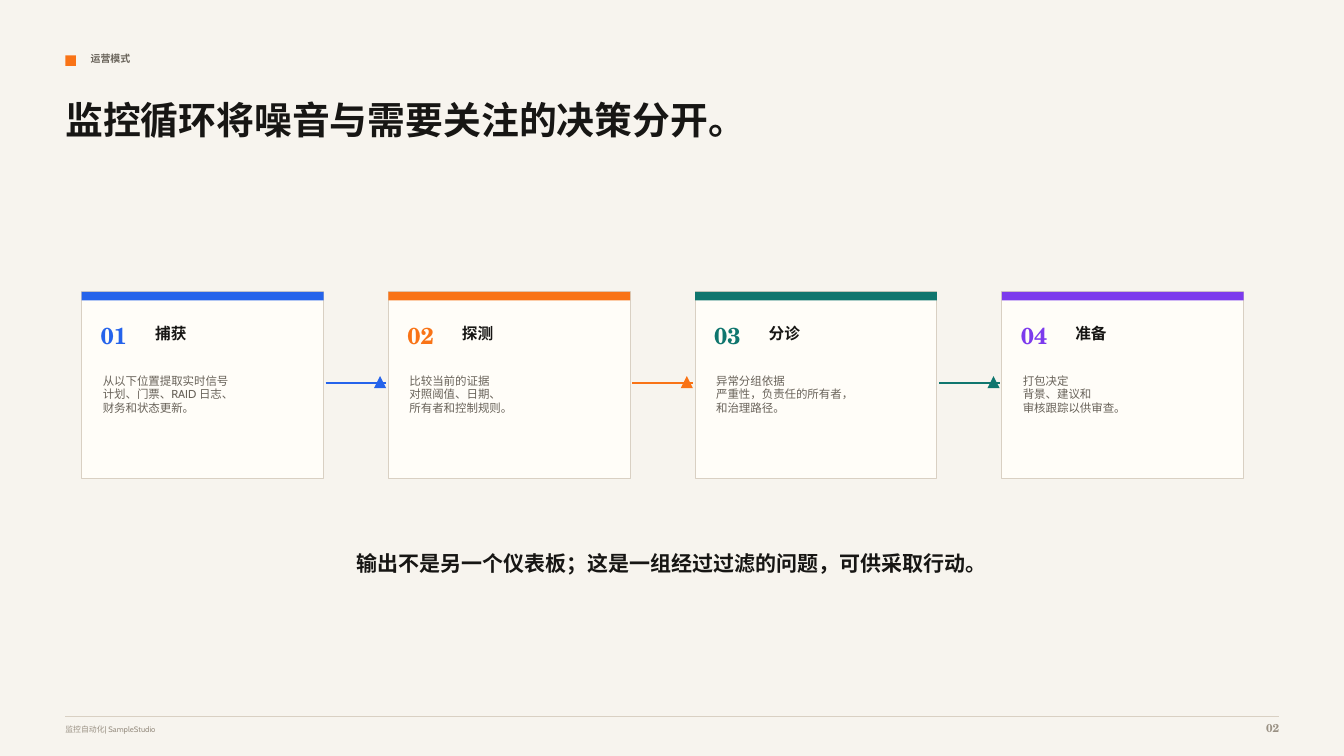
import dataclasses

import lxml.etree
import pptx
import pptx.dml.color
import pptx.enum.shapes
import pptx.enum.text
import pptx.oxml.ns
import pptx.util

SHAPES = pptx.enum.shapes.MSO_SHAPE
ALIGN = pptx.enum.text.PP_ALIGN
SLIDE_WIDTH = pptx.util.Inches(13.33)
SLIDE_HEIGHT = pptx.util.Inches(7.5)


@dataclasses.dataclass(frozen=True)
class Theme:
    sans: str = "Cabin"
    serif: str = "TeX Gyre Schola"
    paper: str = "F7F4EE"
    card: str = "FFFDF8"
    rule: str = "D9D0C3"
    ink: str = "171614"
    muted: str = "69635A"
    faint: str = "9A9184"
    blue: str = "2563EB"
    orange: str = "F97316"
    green: str = "0F766E"
    violet: str = "7C3AED"
    title_size: float = 27
    number_size: float = 16.5
    conclusion_size: float = 15
    heading_size: float = 11.2
    body_size: float = 8.2
    section_size: float = 7.1
    footer_size: float = 5.6
    hairline: float = 0.75
    arrow_line: float = 1.75


THEME = Theme()

# Horizontal and vertical measures are percentages of the slide's width and height.
MARGIN = 4.86
RIGHT_EDGE = 95.18
CARD_LEFT, CARD_TOP = 6.08, 38.62
CARD_WIDTH, CARD_HEIGHT = 18, 24.67
CARD_PITCH = 22.82

STEPS = [
    ("捕获", THEME.blue, ["从以下位置提取实时信号", "计划、门票、RAID 日志、", "财务和状态更新。"]),
    ("探测", THEME.orange, ["比较当前的证据", "对照阈值、日期、", "所有者和控制规则。"]),
    ("分诊", THEME.green, ["异常分组依据", "严重性，负责任的所有者，", "和治理路径。"]),
    ("准备", THEME.violet, ["打包决定", "背景、建议和", "审核跟踪以供审查。"]),
]


def across(share):
    return round(SLIDE_WIDTH * share / 100)


def down(share):
    return round(SLIDE_HEIGHT * share / 100)


def frame(left, top, width, height):
    return across(left), down(top), across(width), down(height)


def rgb(value):
    return pptx.dml.color.RGBColor.from_string(value)


def write(box, lines, *, size, color, font=THEME.sans, bold=False, align=ALIGN.LEFT):
    """Fill a box with one paragraph per line, without insets."""
    text = box.text_frame
    text.word_wrap = True
    text.auto_size = pptx.enum.text.MSO_AUTO_SIZE.NONE
    text.vertical_anchor = pptx.enum.text.MSO_ANCHOR.TOP
    text.margin_left = text.margin_top = text.margin_right = text.margin_bottom = 0
    for index, line in enumerate(lines):
        para = text.add_paragraph() if index else text.paragraphs[0]
        para.alignment = align
        span = para.add_run()
        span.text = line
        span.font.size = pptx.util.Pt(size)
        span.font.bold = bold
        span.font.color.rgb = rgb(color)
        span.font.name = font
        east_asian = lxml.etree.SubElement(
            span.font._element, pptx.oxml.ns.qn("a:ea"))
        east_asian.set("typeface", font)


def add_text(page, place, lines, **style):
    write(page.shapes.add_textbox(*frame(*place)), lines, **style)


def add_block(page, place, fill, outline=None, kind=SHAPES.RECTANGLE):
    block = page.shapes.add_shape(kind, *frame(*place))
    block.shadow.inherit = False
    block.fill.solid()
    block.fill.fore_color.rgb = rgb(fill)
    if outline:
        block.line.color.rgb = rgb(outline)
        block.line.width = pptx.util.Pt(THEME.hairline)
    else:
        block.line.fill.background()


def add_rule(page, left, right, top, color, weight):
    rule = page.shapes.add_connector(
        pptx.enum.shapes.MSO_CONNECTOR.STRAIGHT,
        across(left), down(top), across(right), down(top))
    rule.line.color.rgb = rgb(color)
    rule.line.width = pptx.util.Pt(weight)
    lxml.etree.SubElement(rule._element.spPr, pptx.oxml.ns.qn("a:effectLst"))


def add_title(page, title):
    box = page.shapes.title
    box.left, box.top, box.width, box.height = frame(MARGIN, 12.8, 67.95, 14.4)
    write(box, [title], size=THEME.title_size, color=THEME.ink,
          font=THEME.serif, bold=True)


def add_card(page, left, number, heading, color, lines):
    add_block(page, (left, CARD_TOP, CARD_WIDTH, CARD_HEIGHT), THEME.card, THEME.rule)
    add_block(page, (left, CARD_TOP, CARD_WIDTH, 1.11), color)
    add_text(page, (left + 1.42, CARD_TOP + 3.87, 3.45, 3.87), [f"{number:02d}"],
             size=THEME.number_size, color=color, font=THEME.serif, bold=True)
    add_text(page, (left + 5.47, CARD_TOP + 4.26, 9.98, 2.8), [heading],
             size=THEME.heading_size, color=THEME.ink, bold=True)
    add_text(page, (left + 1.57, CARD_TOP + 10.8, 14.4, 9.47), lines,
             size=THEME.body_size, color=THEME.muted)


def add_link(page, left, color):
    """Join a card to the next with a line and a triangle marker."""
    start = left + CARD_WIDTH + 0.15
    add_rule(page, start, start + 4.5, CARD_TOP + 12.05, color, THEME.arrow_line)
    add_block(page, (start + 3.6, CARD_TOP + 11.12, 0.9, 1.6), color,
              kind=SHAPES.ISOSCELES_TRIANGLE)


def add_footer(page):
    add_rule(page, MARGIN, RIGHT_EDGE, 94.73, THEME.rule, THEME.hairline)
    add_text(page, (MARGIN, 95.87, 59.4, 2), ["监控自动化| SampleStudio"],
             size=THEME.footer_size, color=THEME.faint)
    add_text(page, (RIGHT_EDGE - 3.75, 95.33, 3.75, 2.53), ["02"],
             size=THEME.body_size, color=THEME.faint, font=THEME.serif,
             bold=True, align=ALIGN.RIGHT)


def main():
    deck = pptx.Presentation()
    deck.slide_width, deck.slide_height = SLIDE_WIDTH, SLIDE_HEIGHT
    page = deck.slides.add_slide(deck.slide_layouts.get_by_name("Title Only"))
    page.background.fill.solid()
    page.background.fill.fore_color.rgb = rgb(THEME.paper)

    add_block(page, (MARGIN, 7.33, 0.79, 1.4), THEME.orange)
    add_text(page, (6.75, 6.93, 40.65, 2.53), ["运营模式"],
             size=THEME.section_size, color=THEME.muted, bold=True)
    add_title(page, "监控循环将噪音与需要关注的决策分开。")

    for index, (heading, color, lines) in enumerate(STEPS):
        left = CARD_LEFT + index * CARD_PITCH
        add_card(page, left, index + 1, heading, color, lines)
        if index < len(STEPS) - 1:
            add_link(page, left, color)

    add_text(page, (13.28, 72.8, 73.43, 5.87),
             ["输出不是另一个仪表板；这是一组经过过滤的问题，可供采取行动。"],
             size=THEME.conclusion_size, color=THEME.ink, font=THEME.serif,
             bold=True, align=ALIGN.CENTER)
    add_footer(page)
    deck.save("out.pptx")


if __name__ == "__main__":
    main()
